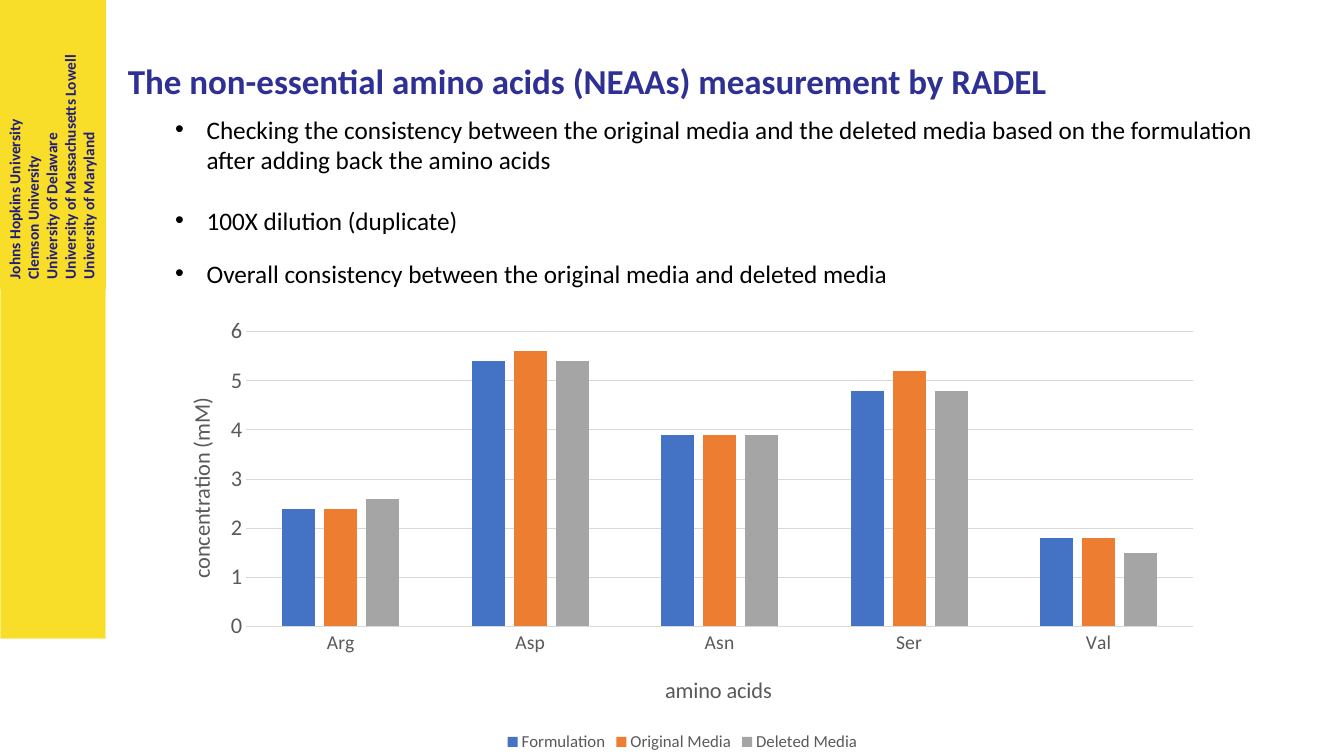
from dataclasses import dataclass

from lxml import etree
from pptx import Presentation
from pptx.chart import data
from pptx.dml.color import RGBColor
from pptx.enum import chart as ch, shapes, text as tx
from pptx.oxml import ns
from pptx.util import Pt

FONT = "Calibri"
NAVY, BLUE, GRAY, RULE = "211D7D", "2E3093", "595959", "D9D9D9"
YELLOW, PALE = "F8DE28", "FBEC85"


@dataclass
class Box:
    left: float
    top: float
    width: float
    height: float

    def place(self) -> tuple:
        return Pt(self.left), Pt(self.top), Pt(self.width), Pt(self.height)


@dataclass
class Series:
    name: str
    vals: tuple
    color: str


@dataclass
class Bullets:
    box: Box
    lines: list


SCHOOLS = ["Johns Hopkins University", "Clemson University",
           "University of Delaware", "University of Massachusetts Lowell",
           "University of Maryland"]
ACIDS = ["Arg", "Asp", "Asn", "Ser", "Val"]
MEDIA = [
    Series("Formulation", (2.4, 5.4, 3.9, 4.8, 1.8), "4472C4"),
    Series("Original Media", (2.4, 5.6, 3.9, 5.2, 1.8), "ED7D31"),
    Series("Deleted Media", (2.6, 5.4, 3.9, 4.8, 1.5), "A5A5A5"),
]
NOTES = [
    Bullets(Box(118, 77.8, 820, 160), [
        "Checking the consistency between the original media and the deleted "
        "media based on the formulation after adding back the amino acids",
        "100X dilution (duplicate)"]),
    Bullets(Box(118, 180.7, 622, 28.8), [
        "Overall consistency between the original media and deleted media"]),
]


def rgb(color: str) -> RGBColor:
    return RGBColor.from_string(color)


def style(font, size: float, color: str, bold: bool = False) -> None:
    font.name, font.size, font.bold = FONT, Pt(size), bold
    font.color.rgb = rgb(color)


def write(frame, lines: list, size: float, color: str = "000000",
          bold: bool = False, bullet: bool = False, gap: float = 0,
          spacing: float = 1, anchor=tx.MSO_ANCHOR.TOP) -> None:
    """Fill a text frame with one paragraph per line."""
    frame.word_wrap = True
    frame.auto_size = tx.MSO_AUTO_SIZE.NONE
    frame.vertical_anchor = anchor
    for i, line in enumerate(lines):
        para = frame.add_paragraph() if i else frame.paragraphs[0]
        if bullet:
            props = para._p.get_or_add_pPr()
            props.set("marL", str(Pt(22.5)))
            props.set("indent", str(-Pt(22.5)))
            etree.SubElement(props, ns.qn("a:buFont")).set("typeface", "Arial")
            etree.SubElement(props, ns.qn("a:buChar")).set("char", "•")
        para.alignment = tx.PP_ALIGN.LEFT
        para.line_spacing = spacing
        para.space_before = Pt(gap if i else 0)
        run = para.add_run()
        run.text = line
        style(run.font, size, color, bold)


def panel(slide, box: Box, line: str = ""):
    shape = slide.shapes.add_shape(shapes.MSO_SHAPE.RECTANGLE, *box.place())
    shape.shadow.inherit = False
    shape.fill.solid()
    shape.fill.fore_color.rgb = rgb(YELLOW)
    if line:
        shape.line.color.rgb = rgb(line)
        shape.line.width = Pt(0.75)
    else:
        shape.line.fill.background()
    return shape


def layout(part, after: str, **sizes: float) -> None:
    """Fix the place of a chart part, in fractions of the chart."""
    for old in part.findall(ns.qn("c:layout")):
        part.remove(old)
    root = etree.Element(ns.qn("c:layout"))
    manual = etree.SubElement(root, ns.qn("c:manualLayout"))
    modes = {"xMode": "edge", "yMode": "edge"}
    if "w" in sizes:
        modes = {"layoutTarget": "inner", **modes}
    for tag, val in {**modes, **sizes}.items():
        etree.SubElement(manual, ns.qn(f"c:{tag}")).set("val", str(val))
    if after:
        part.find(ns.qn(after)).addnext(root)
    else:
        part.insert(0, root)


def set_axis(axis, title: str, size: float, x: float, y: float) -> None:
    axis.major_tick_mark = axis.minor_tick_mark = ch.XL_TICK_MARK.NONE
    style(axis.tick_labels.font, size, GRAY)
    head = axis.axis_title
    run = head.text_frame.paragraphs[0].add_run()
    run.text = title
    style(run.font, 16, GRAY)
    layout(head._element, "c:tx", x=x, y=y)


def add_bars(slide, box: Box) -> None:
    source = data.CategoryChartData()
    source.categories = ACIDS
    for item in MEDIA:
        source.add_series(item.name, item.vals)
    chart = slide.shapes.add_chart(
        ch.XL_CHART_TYPE.COLUMN_CLUSTERED, *box.place(), source).chart
    style(chart.font, 10, "000000")
    chart.has_title = False

    plot = chart.plots[0]
    plot.gap_width, plot.overlap = 219, -27
    plot.vary_by_categories = False
    for bars, item in zip(plot.series, MEDIA):
        bars.format.fill.solid()
        bars.format.fill.fore_color.rgb = rgb(item.color)
    area = chart._chartSpace.find(".//" + ns.qn("c:plotArea"))
    layout(area, "", x=0.09, y=0.05, w=0.89, h=0.66)

    cat, val = chart.category_axis, chart.value_axis
    set_axis(cat, "amino acids", 14, 0.48, 0.81)
    set_axis(val, "concentration (mM)", 16, 0.03, 0.19)
    val.minimum_scale, val.maximum_scale, val.major_unit = 0, 6, 1
    val.format.line.fill.background()
    for line in (cat.format.line, val.major_gridlines.format.line):
        line.color.rgb = rgb(RULE)
        line.width = Pt(0.75)

    chart.has_legend = True
    chart.legend.position = ch.XL_LEGEND_POSITION.BOTTOM
    chart.legend.include_in_layout = False
    style(chart.legend.font, 12, GRAY)


def main() -> None:
    deck = Presentation()
    deck.slide_width, deck.slide_height = Pt(960), Pt(540)
    slide = deck.slides.add_slide(deck.slide_layouts[5])

    title = slide.shapes.title
    title.left, title.top, title.width, title.height = Box(
        84.2, 25.9, 828, 67).place()
    write(title.text_frame,
          ["The non-essential amino acids (NEAAs) measurement by RADEL"],
          25, BLUE, bold=True, spacing=0.9, anchor=tx.MSO_ANCHOR.MIDDLE)

    panel(slide, Box(0, 0, 75.6, 455.8), PALE)
    side = panel(slide, Box(-65.5, 65.5, 206.6, 75.6))
    side.rotation = 270
    write(side.text_frame, SCHOOLS, 11, NAVY, bold=True)

    add_bars(slide, Box(107.3, 221, 760.3, 319))
    for note in NOTES:
        area = slide.shapes.add_textbox(*note.box.place())
        write(area.text_frame, note.lines, 18, bullet=True, gap=22)
    deck.save("out.pptx")


if __name__ == "__main__":
    main()
